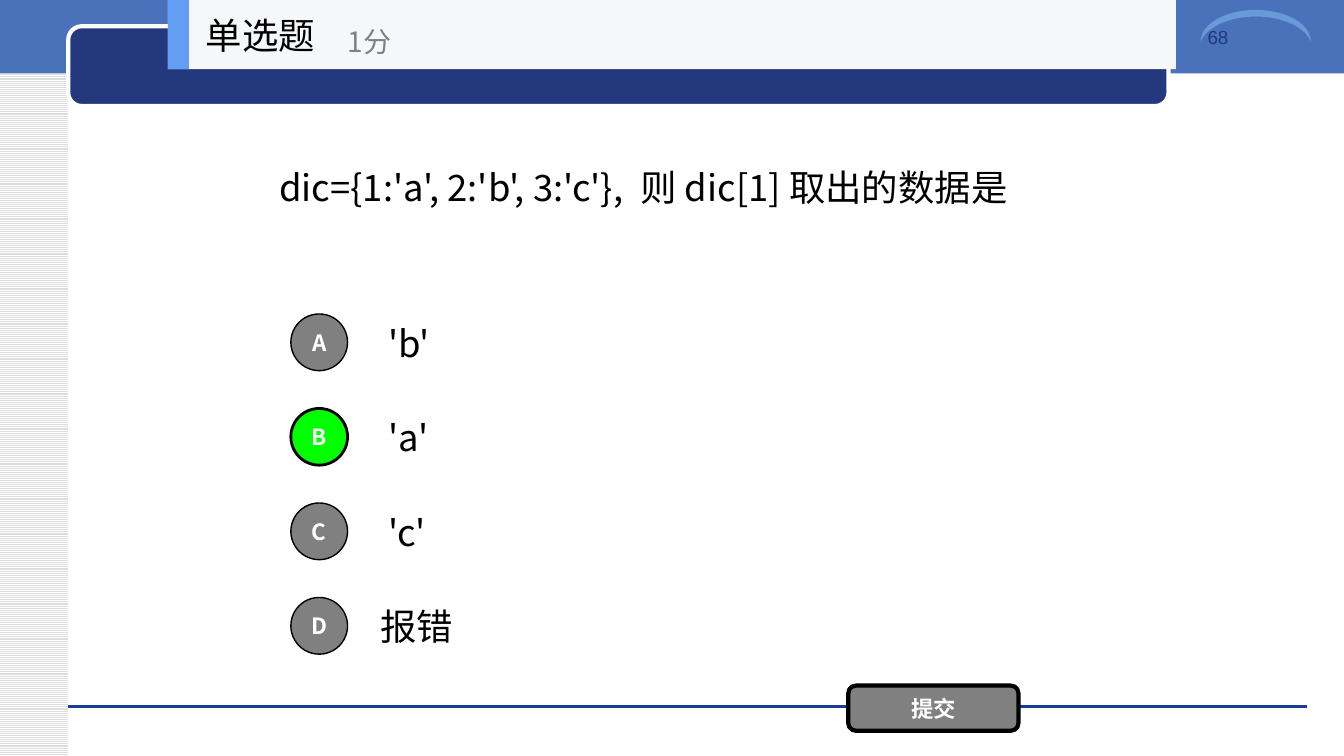
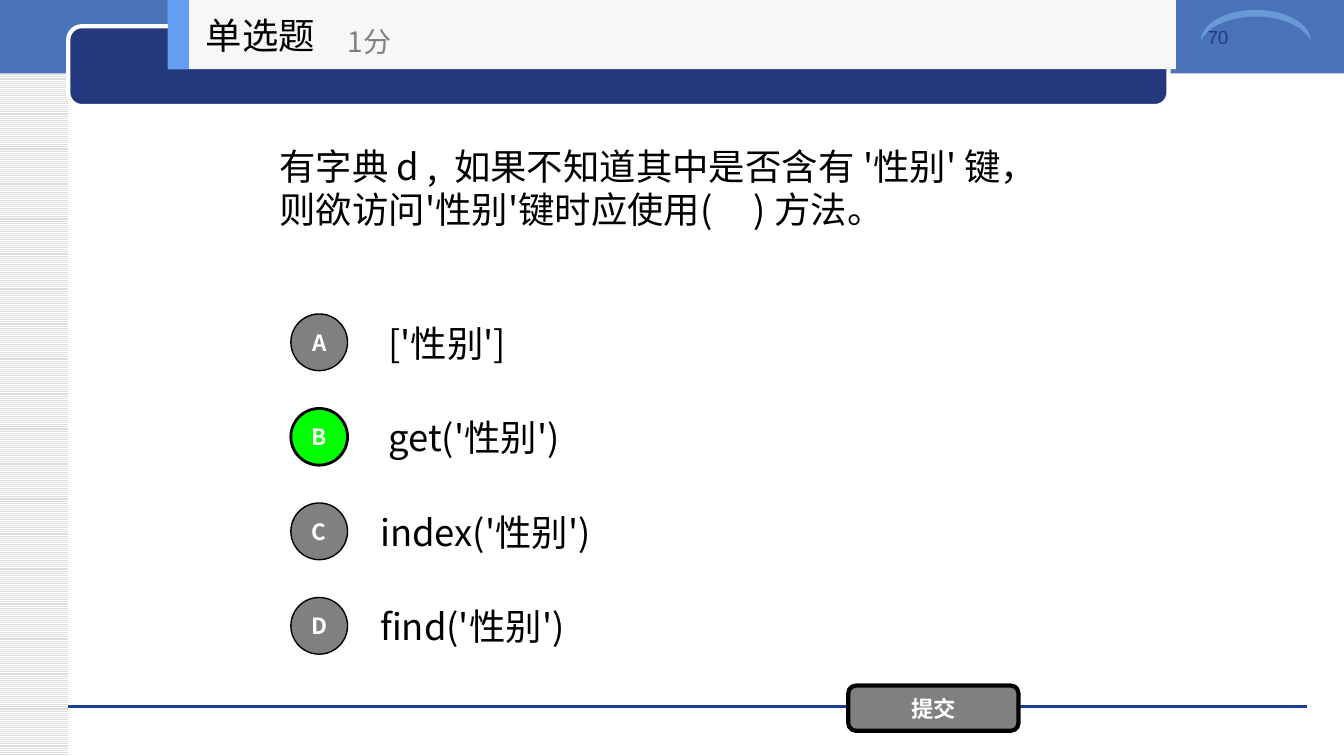
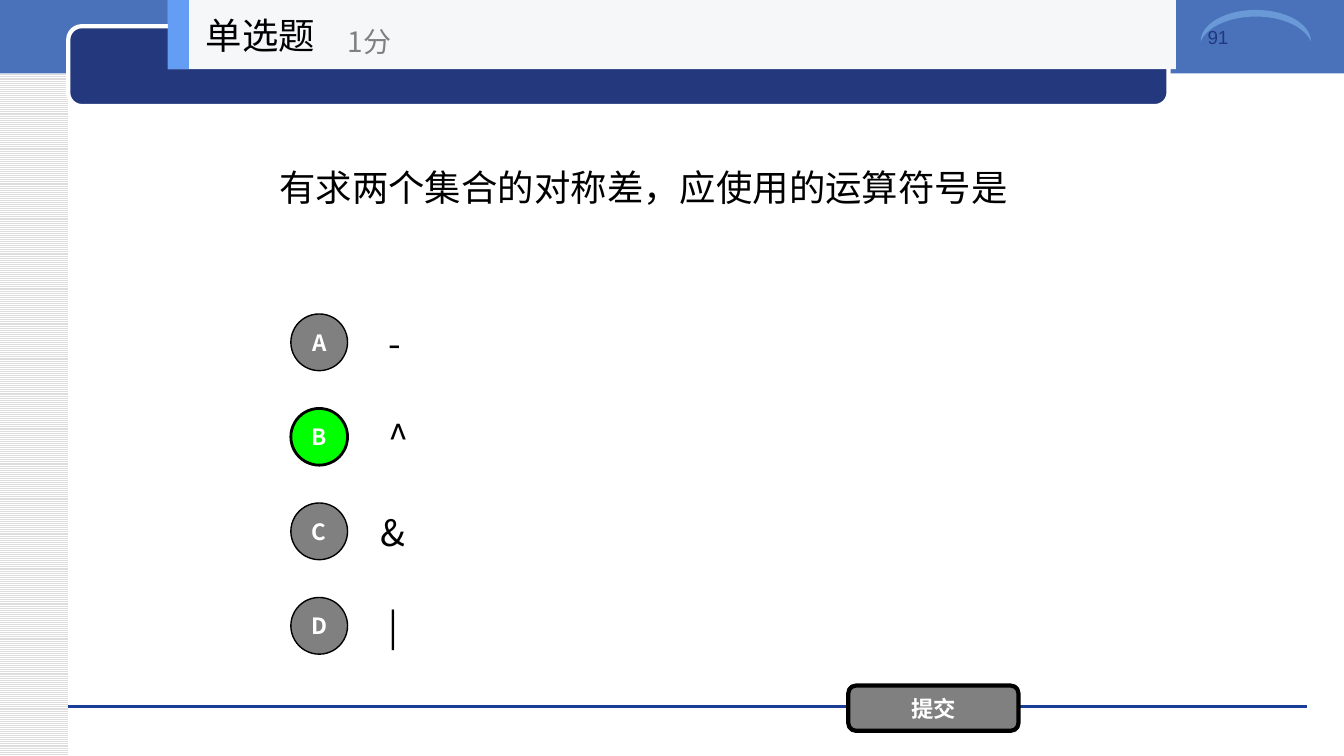
from dataclasses import dataclass
from typing import NamedTuple

from lxml.etree import SubElement as Sub
from pptx import Presentation
from pptx.dml.color import RGBColor as Rgb
from pptx.enum.dml import MSO_PATTERN as Pat
from pptx.enum.shapes import MSO_CONNECTOR as Wire, MSO_SHAPE as Kind
from pptx.enum.text import MSO_ANCHOR as Anchor, MSO_AUTO_SIZE as Fit, PP_ALIGN as Align
from pptx.oxml.ns import qn
from pptx.util import Pt

SCALE = 9525


@dataclass(frozen=True)
class Theme:
    sans: str = "Noto Sans CJK SC"
    latin: str = "Arial"
    black: str = "000000"
    white: str = "FFFFFF"
    grey: str = "808080"
    green: str = "00FF00"
    navy: str = "23387D"
    band: str = "4972BB"
    rule: str = "1A3D97"
    moon: str = "6A99D8"
    pale: str = "F6F7F8"
    sky: str = "639EF4"
    stripe: str = "DDDDDD"
    large: float = 26
    mid: float = 20
    small: float = 16
    page: float = 13.5


THEME = Theme()


class Box(NamedTuple):
    left: int
    top: int
    width: int
    height: int

    def emu(self) -> list[int]:
        return [n * SCALE for n in self]

    def down(self, gap: int) -> "Box":
        return self._replace(top=self.top + gap)


@dataclass(frozen=True)
class Style:
    size: float
    color: str
    face: str = THEME.sans
    bold: bool = False
    align: Align = Align.LEFT
    anchor: Anchor = Anchor.MIDDLE
    inset: int = 10


@dataclass(frozen=True)
class Quiz:
    page: str
    ask: str
    picks: tuple[str, ...]
    key: int = 1


BODY = Style(THEME.large, THEME.black)
POINTS = Style(THEME.mid, THEME.grey)
PAGE = Style(THEME.page, THEME.navy, face=THEME.latin, anchor=Anchor.TOP)
BADGE = Style(THEME.small, THEME.white, bold=True, align=Align.CENTER, inset=0)

PICK = Box(352, 293, 672, 67)
DISC = Box(277, 299, 54, 54)
STEP = 90

QUIZZES = (
    Quiz("68", "dic={1:'a', 2:'b', 3:'c'},  则 dic[1] 取出的数据是",
         (" 'b'", " 'a'", " 'c'", "报错")),
    Quiz("70", "有字典 d ,  如果不知道其中是否含有 '性别' 键， 则欲访问'性别'键时应使用(     ) 方法。",
         (" ['性别']", " get('性别')", "index('性别')", "find('性别')")),
    Quiz("91", "有求两个集合的对称差，应使用的运算符号是",
         (" -", " ^", "&", " |")),
)


def apply(item, values: dict) -> None:
    for name, value in values.items():
        setattr(item, name, value)


def write(shape, text: str, style: Style) -> None:
    frame = shape.text_frame
    sides = ("margin_left", "margin_right")
    apply(frame, {"word_wrap": True, "auto_size": Fit.NONE, "vertical_anchor": style.anchor})
    apply(frame, dict.fromkeys(sides, style.inset * SCALE))
    para = frame.paragraphs[0]
    apply(para, {"alignment": style.align, "space_before": Pt(0)})
    run = para.add_run()
    run.text = text
    apply(run.font, {"name": style.face, "size": Pt(style.size), "bold": style.bold})
    run.font.color.rgb = Rgb.from_string(style.color)
    Sub(run.font._element, qn("a:ea"), typeface=style.face)


def label(slide, box: Box, text: str, style: Style) -> None:
    write(slide.shapes.add_textbox(*box.emu()), text, style)


def fill_in(holder, box: Box, text: str, style: Style) -> None:
    apply(holder, dict(zip(box._fields, box.emu())))
    write(holder, text, style)
    props = holder.text_frame.paragraphs[0]._p.get_or_add_pPr()
    apply_xml = {"marL": "0", "indent": "0"}
    for name, value in apply_xml.items():
        props.set(name, value)
    Sub(props, qn("a:buNone"))


def block(slide, kind: Kind, box: Box, fill: str, edge: str = "", weight: float = 0):
    shape = slide.shapes.add_shape(kind, *box.emu())
    shape.shadow.inherit = False
    shape.fill.solid()
    shape.fill.fore_color.rgb = Rgb.from_string(fill)
    if edge:
        shape.line.color.rgb = Rgb.from_string(edge)
        shape.line.width = Pt(weight)
    else:
        shape.line.fill.background()
    return shape


def frame_up(slide) -> None:
    strip = block(slide, Kind.RECTANGLE, Box(0, 0, 65, 720), THEME.white)
    strip.fill.patterned()
    strip.fill.pattern = Pat.LIGHT_HORIZONTAL
    strip.fill.fore_color.rgb = Rgb.from_string(THEME.stripe)
    strip.fill.back_color.rgb = Rgb.from_string(THEME.white)
    band = block(slide, Kind.RECTANGLE, Box(0, -3, 1280, 73), THEME.band)
    rule = slide.shapes.add_connector(
        Wire.STRAIGHT, *(n * SCALE for n in (65, 673, 1245, 673)))
    rule.line.color.rgb = Rgb.from_string(THEME.rule)
    rule.line.width = Pt(0)
    Sub(rule._element.spPr, qn("a:effectLst"))
    tab = block(slide, Kind.ROUNDED_RECTANGLE, Box(65, 25, 1048, 76),
                THEME.navy, THEME.white, 3)
    tab.adjustments[0] = 0.17
    moon = block(slide, Kind.MOON, Box(1181, -28, 30, 105), THEME.moon)
    moon.rotation = 90
    moon.adjustments[0] = 0.21
    tree = slide.slide_layout.shapes.element
    for part in (strip, band, rule, tab, moon):
        tree.append(part.element)


def draw(slide, quiz: Quiz) -> None:
    title, body = slide.placeholders
    label(slide, Box(1140, 20, 116, 68), quiz.page, PAGE)
    fill_in(body, Box(256, 66, 768, 225), quiz.ask, BODY)
    for i, (mark, pick) in enumerate(zip("ABCD", quiz.picks)):
        label(slide, PICK.down(i * STEP), pick, BODY)
        hit = i == quiz.key
        disc = block(slide, Kind.OVAL, DISC.down(i * STEP),
                     THEME.green if hit else THEME.grey, THEME.black, 2 if hit else 1)
        write(disc, mark, BADGE)
    send = block(slide, Kind.ROUNDED_RECTANGLE, Box(808, 653, 162, 43),
                 THEME.grey, THEME.black, 3)
    write(send, "提交", BADGE)
    block(slide, Kind.RECTANGLE, Box(160, 0, 960, 66), THEME.pale)
    block(slide, Kind.RECTANGLE, Box(160, 0, 20, 66), THEME.sky)
    fill_in(title, Box(186, 0, 200, 66), "单选题", BODY)
    slide.shapes.element.append(title.element)
    label(slide, Box(321, 12, 240, 54), "1分", POINTS)


def main() -> None:
    deck = Presentation()
    apply(deck, {"slide_width": 1280 * SCALE, "slide_height": 720 * SCALE})
    layout = deck.slide_layouts[1]
    for holder in list(layout.placeholders)[2:]:
        layout.shapes.element.remove(holder.element)
    slides = [deck.slides.add_slide(layout) for _ in QUIZZES]
    frame_up(slides[0])
    for slide, quiz in zip(slides, QUIZZES):
        draw(slide, quiz)
    deck.save("out.pptx")


if __name__ == "__main__":
    main()
